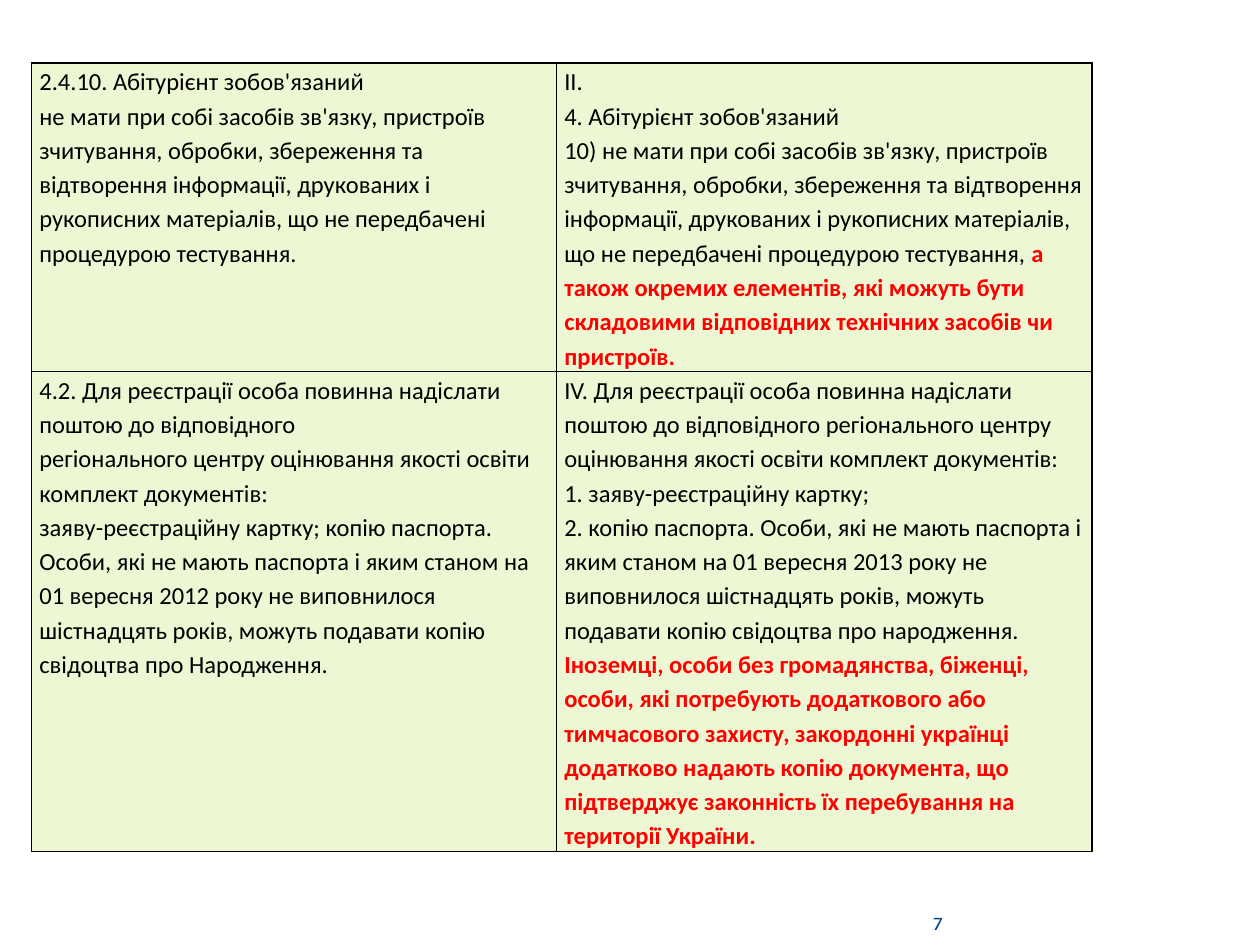
import pptx
import pptx.dml.color
import pptx.enum.text
import pptx.oxml
import pptx.oxml.ns
import pptx.util
from pptx.util import Pt

COLORS = {"text": "000000", "change": "FF0000", "cell": "EDF7D3", "border": "000000", "number": "073E87"}

COLUMN_WIDTHS = [300, 306]
ROW_HEIGHTS = [176, 274]

OLD_RULES = [
    [
        "2.4.10. Абітурієнт зобов'язаний",
        "не мати при собі засобів зв'язку, пристроїв зчитування, обробки, збереження та",
        "відтворення інформації, друкованих і рукописних матеріалів, що не передбачені",
        "процедурою тестування.",
    ],
    [
        "4.2. Для реєстрації особа повинна надіслати поштою до відповідного",
        "регіонального центру оцінювання якості освіти комплект документів:",
        "заяву-реєстраційну картку; копію паспорта. Особи, які не мають паспорта і яким станом на "
        "01 вересня 2012 року не виповнилося шістнадцять років, можуть подавати копію свідоцтва про Народження.",
    ],
]
NEW_RULES = [
    [
        "ІІ.",
        "4. Абітурієнт зобов'язаний",
        "10) не мати при собі засобів зв'язку, пристроїв зчитування, обробки, збереження та відтворення "
        "інформації, друкованих і рукописних матеріалів, що не передбачені процедурою тестування, ",
    ],
    [
        "ІV. Для реєстрації особа повинна надіслати поштою до відповідного регіонального центру "
        "оцінювання якості освіти комплект документів:",
        "1. заяву-реєстраційну картку;",
        "2. копію паспорта. Особи, які не мають паспорта і яким станом на 01 вересня 2013 року не "
        "виповнилося шістнадцять років, можуть подавати копію свідоцтва про народження. ",
    ],
]
ADDITIONS = [
    "а також окремих елементів, які можуть бути складовими відповідних технічних засобів чи пристроїв.",
    "Іноземці, особи без громадянства, біженці, особи, які потребують додаткового або тимчасового захисту, "
    "закордонні українці додатково надають копію документа, що підтверджує законність їх перебування "
    "на території України.",
]


def rgb(name):
    return pptx.dml.color.RGBColor.from_string(COLORS[name])


def format_run(run, size, font, color, bold=False):
    run.font.size = Pt(size)
    run.font.name = font
    run.font.bold = bold
    run.font.color.rgb = rgb(color)


def add_borders(cell):
    properties = cell._tc.get_or_add_tcPr()
    for index, side in enumerate(("lnL", "lnR", "lnT", "lnB")):
        border = pptx.oxml.parse_xml(
            f'<a:{side} {pptx.oxml.ns.nsdecls("a")} w="{Pt(1)}"><a:solidFill>'
            f'<a:srgbClr val="{COLORS["border"]}"/></a:solidFill></a:{side}>'
        )
        properties.insert(index, border)


def fill_cell(cell, lines, addition=""):
    cell.margin_left = cell.margin_right = Pt(4.5)
    cell.margin_top = cell.margin_bottom = Pt(0)
    cell.fill.solid()
    cell.fill.fore_color.rgb = rgb("cell")
    add_borders(cell)
    cell.text_frame.text = "\n".join(lines)
    for paragraph in cell.text_frame.paragraphs:
        paragraph.line_spacing = 1.15
        format_run(paragraph.runs[0], 14, "Calibri", "text")
    if addition:
        run = cell.text_frame.paragraphs[-1].add_run()
        run.text = addition
        format_run(run, 14, "Calibri", "change", True)


def add_comparison(slide, left, top):
    table = slide.shapes.add_table(
        len(ROW_HEIGHTS), len(COLUMN_WIDTHS), Pt(left), Pt(top), Pt(sum(COLUMN_WIDTHS)), Pt(sum(ROW_HEIGHTS))
    ).table
    table.first_row = False
    table.horz_banding = False
    for column, width in zip(table.columns, COLUMN_WIDTHS):
        column.width = Pt(width)
    for index, (old, new, addition) in enumerate(zip(OLD_RULES, NEW_RULES, ADDITIONS)):
        table.rows[index].height = Pt(ROW_HEIGHTS[index])
        fill_cell(table.cell(index, 0), old)
        fill_cell(table.cell(index, 1), new, addition)


def add_page_number(slide, left, top, width, height):
    frame = slide.shapes.add_textbox(Pt(left), Pt(top), Pt(width), Pt(height)).text_frame
    frame.word_wrap = True
    frame.margin_left = frame.margin_right = frame.margin_top = frame.margin_bottom = Pt(0)
    frame.vertical_anchor = pptx.enum.text.MSO_ANCHOR.BOTTOM
    frame.text = "7"
    paragraph = frame.paragraphs[0]
    paragraph.alignment = pptx.enum.text.PP_ALIGN.RIGHT
    format_run(paragraph.runs[0], 11, "Karla", "number")


def main():
    presentation = pptx.Presentation()
    presentation.slide_width = Pt(720)
    presentation.slide_height = Pt(540)
    slide = presentation.slides.add_slide(presentation.slide_layouts[6])
    add_comparison(slide, 18, 36)
    add_page_number(slide, 492.5, 516, 46, 18)
    presentation.save("out.pptx")


if __name__ == "__main__":
    main()
